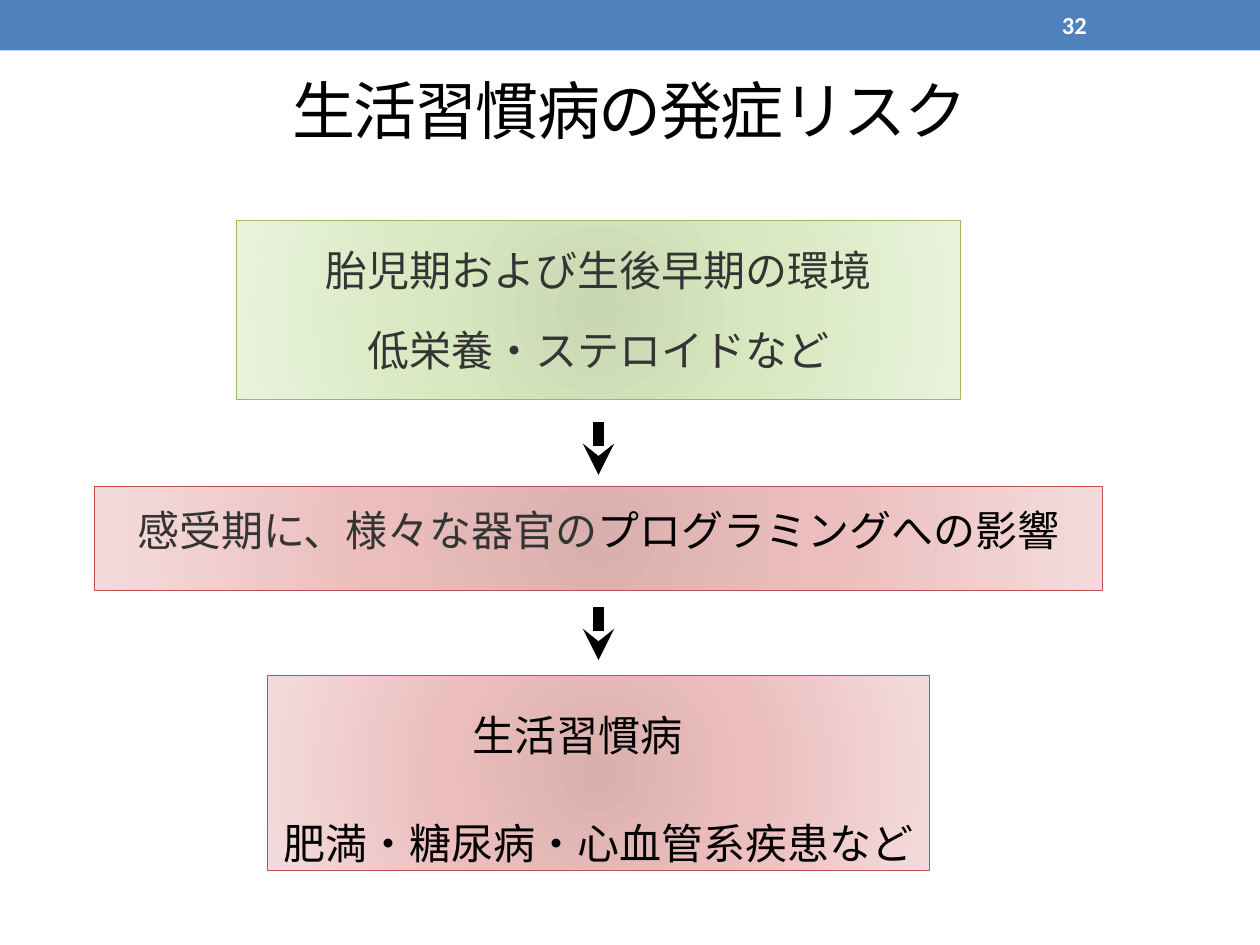
from dataclasses import dataclass

from pptx import Presentation
from pptx import oxml
from pptx import util as u
from pptx.dml.color import RGBColor
from pptx.enum import shapes, text
from pptx.oxml import ns


@dataclass(frozen=True)
class Theme:
    bar: str = "4F81BD"
    ink: str = "000000"
    soft_ink: str = "343434"
    white: str = "FFFFFF"
    green: tuple = ("9BBB59", "C8D7B2", "D8E8C0", "E9F3DC")
    red: tuple = ("C0504D", "DAB0AF", "EBBEBD", "F4DBDB")
    japanese: str = "Noto Sans CJK JP"
    latin: str = "Calibri"
    title_size: int = 36
    body_size: int = 24
    number_size: int = 14


THEME = Theme()
COLUMNS, ROWS = 100, 75
AXIS = 47.5


def add_run(paragraph, words, *, size=THEME.body_size, color=THEME.ink,
            face=THEME.japanese, bold=False, tracking=None):
    run = paragraph.add_run()
    run.text = words
    font = run.font
    font.size, font.name, font.bold = u.Pt(size), face, bold
    font.color.rgb = RGBColor.from_string(color)
    properties = run._r.get_or_add_rPr()
    east_asian = oxml.parse_xml(f'<a:ea {ns.nsdecls("a")} typeface="{face}"/>')
    properties.append(east_asian)
    if tracking is not None:
        properties.set("spc", str(int(tracking * 100)))


class SlideBuilder:
    def __init__(self, deck, theme):
        self.theme = theme
        self.cell_width = deck.slide_width / COLUMNS
        self.cell_height = deck.slide_height / ROWS
        self.slide = deck.slides.add_slide(deck.slide_layouts[5])

    def area(self, left, top, width, height):
        return (int(left * self.cell_width), int(top * self.cell_height),
                int(width * self.cell_width), int(height * self.cell_height))

    def rectangle(self, *cells):
        rectangle = self.slide.shapes.add_shape(
            shapes.MSO_SHAPE.RECTANGLE, *self.area(*cells))
        rectangle.shadow.inherit = False
        return rectangle

    def bar(self, height):
        bar = self.rectangle(0, 0, COLUMNS, height)
        bar.fill.solid()
        bar.fill.fore_color.rgb = RGBColor.from_string(self.theme.bar)
        bar.line.fill.background()

    def title(self, words, *cells):
        title = self.slide.shapes.title
        title.left, title.top, title.width, title.height = self.area(*cells)
        frame = title.text_frame
        frame.vertical_anchor = text.MSO_ANCHOR.MIDDLE
        frame.paragraphs[0].alignment = text.PP_ALIGN.CENTER
        add_run(frame.paragraphs[0], words, size=self.theme.title_size, tracking=-1)

    def page_number(self, words, *cells):
        frame = self.slide.shapes.add_textbox(*self.area(*cells)).text_frame
        frame.word_wrap = True
        frame.vertical_anchor = text.MSO_ANCHOR.MIDDLE
        add_run(frame.paragraphs[0], words, size=self.theme.number_size,
                color=self.theme.white, face=self.theme.latin, bold=True)

    def radial_fill(self, panel, colors):
        stops = "".join(
            f'<a:gs pos="{share * 1000}"><a:srgbClr val="{color}"/></a:gs>'
            for share, color in zip((0, 45, 100), colors))
        gradient = oxml.parse_xml(
            f'<a:gradFill {ns.nsdecls("a")} rotWithShape="1"><a:gsLst>{stops}</a:gsLst>'
            '<a:path path="circle">'
            '<a:fillToRect l="50000" t="50000" r="50000" b="50000"/>'
            '</a:path></a:gradFill>')
        panel.fill.background()
        properties = panel._element.spPr
        properties.replace(properties.find(ns.qn("a:noFill")), gradient)

    def stage(self, lines, top, width, height, palette, *, spacing=1.0,
              anchor=text.MSO_ANCHOR.MIDDLE, inset=(0, 0)):
        panel = self.rectangle(AXIS - width / 2, top, width, height)
        outline, *colors = palette
        self.radial_fill(panel, colors)
        panel.line.color.rgb = RGBColor.from_string(outline)
        panel.line.width = u.Pt(0.75)
        frame = panel.text_frame
        frame.word_wrap = True
        frame.vertical_anchor = anchor
        frame.margin_left = frame.margin_right = u.Inches(inset[0])
        frame.margin_top = frame.margin_bottom = u.Inches(inset[1])
        for index, line in enumerate(lines):
            paragraph = frame.add_paragraph() if index else frame.paragraphs[0]
            paragraph.alignment = text.PP_ALIGN.CENTER
            paragraph.space_before = u.Pt(17)
            paragraph.line_spacing = spacing
            for words, color in line:
                add_run(paragraph, words, color=color)

    def arrow(self, top, length):
        x, y, _, drop = self.area(AXIS, top, 0, length)
        arrow = self.slide.shapes.add_connector(
            shapes.MSO_CONNECTOR.STRAIGHT, x, y, x, y + drop)
        arrow.line.color.rgb = RGBColor.from_string(self.theme.ink)
        arrow.line.width = u.Pt(6)
        namespace = ns.nsdecls("a")
        arrow.line._get_or_add_ln().append(
            oxml.parse_xml(f'<a:tailEnd {namespace} type="stealth"/>'))
        arrow._element.spPr.append(oxml.parse_xml(f"<a:effectLst {namespace}/>"))


def main():
    deck = Presentation()
    deck.slide_width, deck.slide_height = u.Inches(10), u.Inches(7.5)
    page = SlideBuilder(deck, THEME)
    ink, soft = THEME.ink, THEME.soft_ink

    page.bar(4)
    page.title("生活習慣病の発症リスク", 2.4, 2.1, 95.2, 13.1)
    page.stage([[("胎児期および生後早期の環境", soft)],
                [("低栄養・ステロイドなど", soft)]],
               17.5, 57.5, 14.2, THEME.green)
    page.stage([[("感受期に、様々な器官の", soft), ("プログラミングへの影響", ink)]],
               38.6, 80, 8.3, THEME.red, spacing=0.5)
    page.stage([[("生活習慣病　", ink)], [("肥満・糖尿病・心血管系疾患など", ink)]],
               53.6, 52.5, 15.5, THEME.red, spacing=1.55,
               anchor=text.MSO_ANCHOR.TOP, inset=(0.1, 0.05))
    for top in (33.5, 48.2):
        page.arrow(top, 4.2)
    page.page_number("32", 83.3, 0.2, 11.7, 3.6)
    deck.save("out.pptx")


if __name__ == "__main__":
    main()
